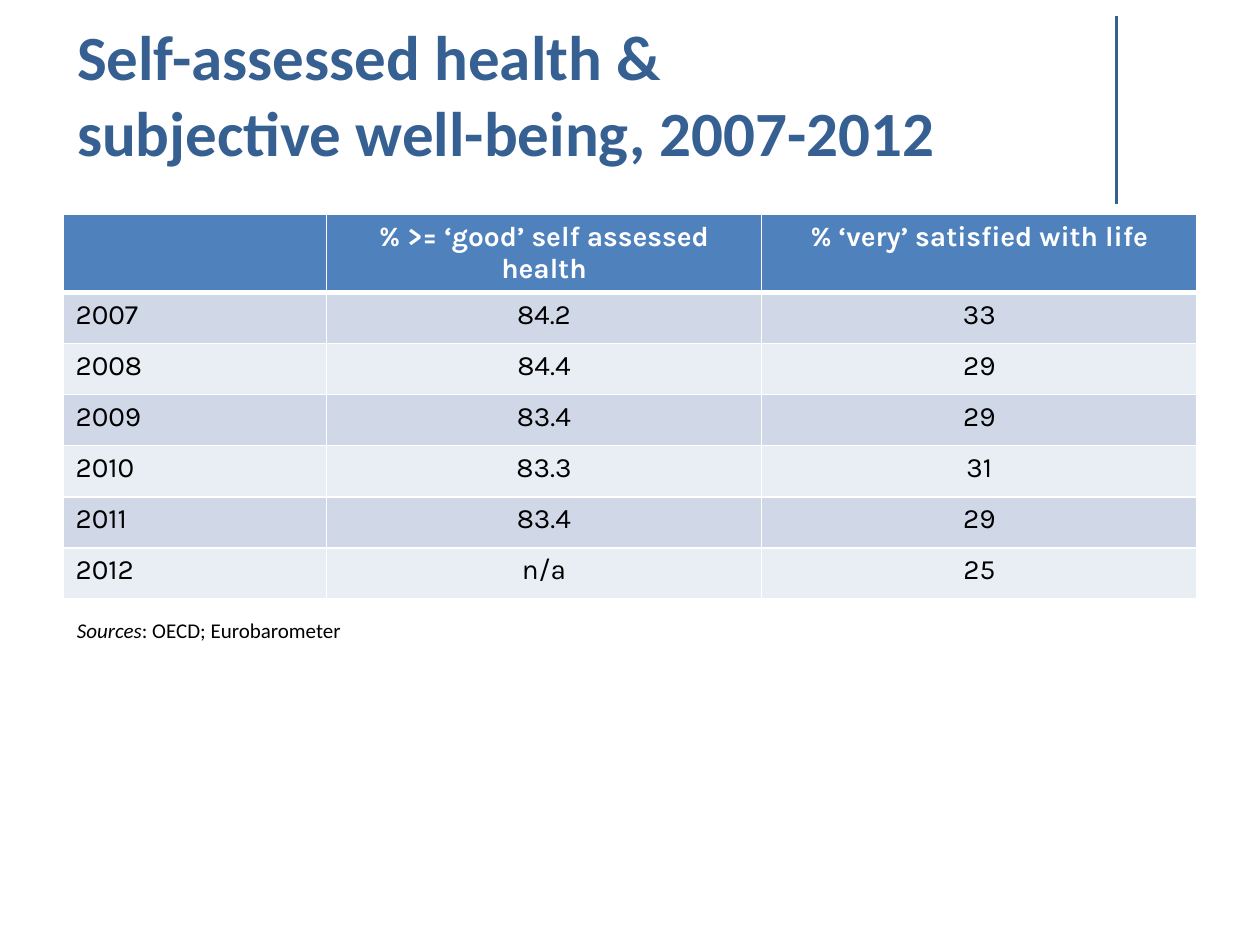
from lxml import etree
from pptx import Presentation
from pptx.dml.color import RGBColor
from pptx.enum.shapes import MSO_CONNECTOR
from pptx.enum.text import MSO_ANCHOR, MSO_AUTO_SIZE, PP_ALIGN
from pptx.oxml.ns import qn
from pptx.util import Cm, Pt

STRAIGHT = MSO_CONNECTOR.STRAIGHT
BOTTOM = MSO_ANCHOR.BOTTOM
NO_FIT, GROW = MSO_AUTO_SIZE.NONE, MSO_AUTO_SIZE.SHAPE_TO_FIT_TEXT
LEFT, CENTER = PP_ALIGN.LEFT, PP_ALIGN.CENTER

NAVY, BLUE, BLACK, WHITE = "376092", "4F81BD", "000000", "FFFFFF"
BANDS = ("D0D8E8", "E9EDF4")
ROWS = [
    ("", "% >= ‘good’ self assessed health", "% ‘very’ satisfied with life"),
    ("2007", "84.2", "33"),
    ("2008", "84.4", "29"),
    ("2009", "83.4", "29"),
    ("2010", "83.3", "31"),
    ("2011", "83.4", "29"),
    ("2012", "n/a", "25"),
]
HEAD = {"name": "Calibri", "size": Pt(36), "bold": True}
LABEL = {"name": "Karla", "size": Pt(16), "bold": True}
VALUE = {**LABEL, "bold": False}
NOTE = {"name": "Calibri", "size": Pt(12), "bold": False}


def paint(color, tone):
    """Give a colour format a hex colour."""
    color.rgb = RGBColor.from_string(tone)


def style(font, form, tone):
    """Apply a dict of font values and a colour."""
    for key, value in form.items():
        setattr(font, key, value)
    paint(font.color, tone)


def edge(cell, side, width):
    """Draw one white border of a cell."""
    line = etree.SubElement(cell._tc.get_or_add_tcPr(), qn(f"a:ln{side}"), w=str(Pt(width)))
    fill = etree.SubElement(line, qn("a:solidFill"))
    etree.SubElement(fill, qn("a:srgbClr"), val=WHITE)


def add_title(slide, left, top, width, height):
    """Place the title in its box, with the rule to its right."""
    title = slide.shapes.title
    place = {"left": left, "top": top, "width": width, "height": height}
    for key, value in place.items():
        setattr(title, key, value)
    frame = title.text_frame
    frame.text = "Self-assessed health &\vsubjective well-being, 2007-2012"
    frame.auto_size, frame.vertical_anchor = NO_FIT, BOTTOM
    para = frame.paragraphs[0]
    para.alignment = LEFT
    for run in para.runs:
        style(run.font, HEAD, NAVY)
    side = left + width + Cm(0.25)
    rise = top - Cm(0.79)
    rule = slide.shapes.add_connector(STRAIGHT, side, rise, side, rise + Cm(3.78))
    rule.line.width = Pt(1.5)
    paint(rule.line.color, NAVY)
    etree.SubElement(rule._element.spPr, qn("a:effectLst"))


def add_grid(slide, left, top, width, height):
    """Place the table of health and well-being by year."""
    count = len(ROWS)
    grid = slide.shapes.add_table(count, 3, left, top, width, height).table
    first = Cm(5.31)
    for col, size in zip(grid.columns, (first, *[(width - first) // 2] * 2)):
        col.width = size
    for i, row in enumerate(ROWS):
        grid.rows[i].height = height // count
        for j, text in enumerate(row):
            cell = grid.cell(i, j)
            for part in "LRTB":
                thick = (i, part) in ((0, "B"), (1, "T"))
                edge(cell, part, 3 if thick else 1)
            cell.fill.solid()
            paint(cell.fill.fore_color, BANDS[(i - 1) % 2] if i else BLUE)
            cell.text = text
            para = cell.text_frame.paragraphs[0]
            para.alignment = CENTER if j else LEFT
            style(para.font, VALUE if i else LABEL, BLACK if i else WHITE)


def add_source(slide, left, top, width, height):
    """Place the source line below the table."""
    frame = slide.shapes.add_textbox(left, top, width, height).text_frame
    frame.word_wrap, frame.auto_size = False, GROW
    for text, slant in (("Sources", True), (": OECD; Eurobarometer", False)):
        run = frame.paragraphs[0].add_run()
        run.text = text
        style(run.font, {**NOTE, "italic": slant}, BLACK)


def main():
    """Build and save the slide."""
    deck = Presentation()
    deck.slide_width, deck.slide_height = Cm(25.4), Cm(19.05)
    slide = deck.slides.add_slide(deck.slide_layouts[5])
    add_title(slide, Cm(1.3), Cm(1.12), Cm(20.96), Cm(2.41))
    add_grid(slide, Cm(1.27), Cm(4.32), Cm(22.86), Cm(7.21))
    add_source(slide, Cm(1.3), Cm(12.32), Cm(5.89), Cm(0.77))
    deck.save("out.pptx")


if __name__ == "__main__":
    main()
